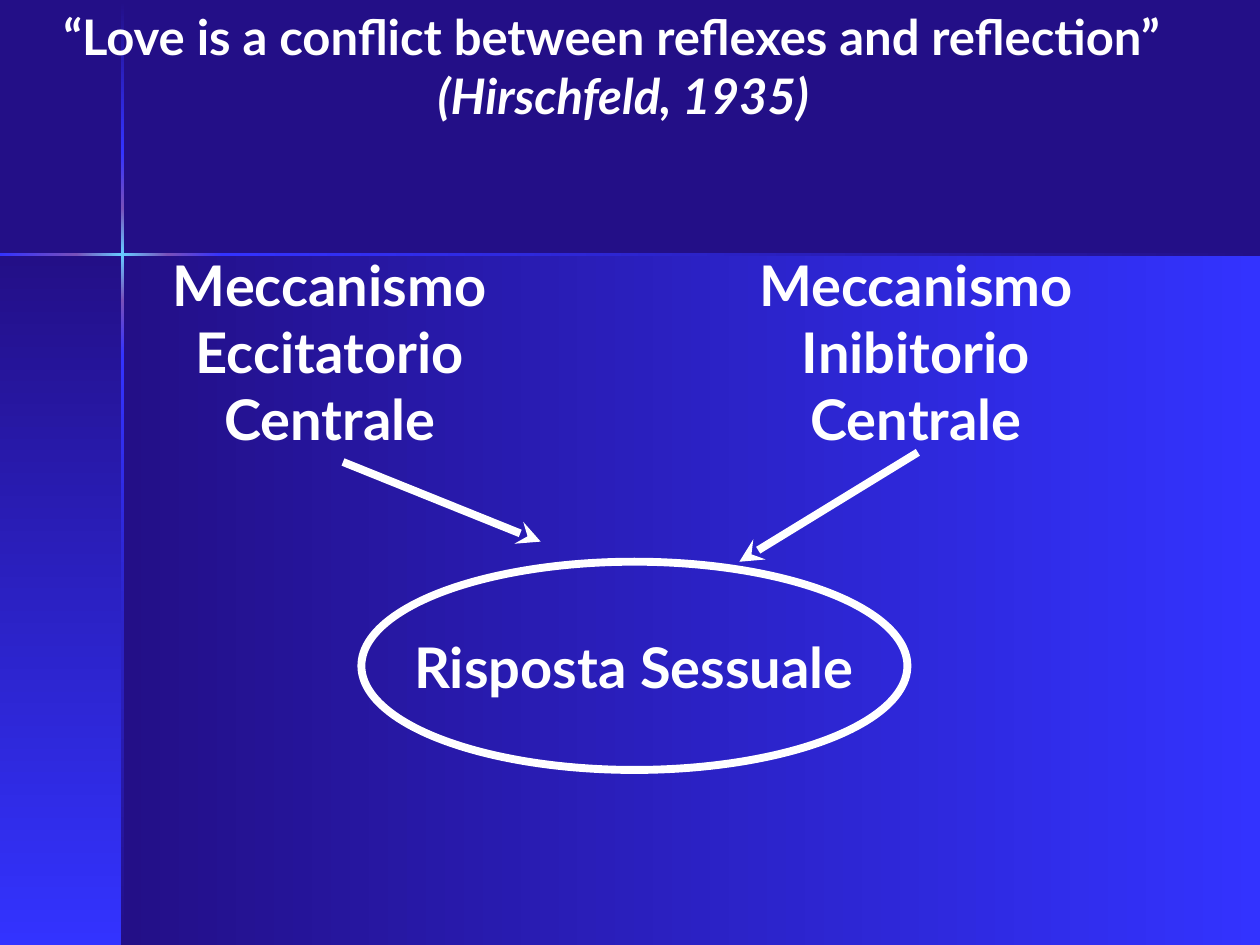
from itertools import pairwise

from lxml import etree
from pptx import Presentation
from pptx.dml.color import RGBColor
from pptx.enum import shapes, text
from pptx.oxml.ns import qn
from pptx.util import Pt

NAVY, BLUE, VIOLET, CYAN, WHITE = "230F87", "3333FF", "7850BA", "66CCFF", "FFFFFF"
FONT = "Lato"
CROSS_X, CROSS_Y = 70, 145.5
RAIL = 1.5
WIDTH, HEIGHT = 720, 540


def color(value):
    return RGBColor.from_string(value)


def add_gradient(slide, box, colors, angle):
    """Borderless rectangle with evenly spaced colours; 90 runs downward."""
    shape = slide.shapes.add_shape(shapes.MSO_SHAPE.RECTANGLE, *map(Pt, box))
    shape.shadow.inherit = False
    shape.line.fill.background()
    shape.fill.gradient()
    shape.fill.gradient_angle = -angle % 360
    stops = next(shape._element.iter(qn("a:gsLst")))
    for stop in list(stops):
        stops.remove(stop)
    for index, value in enumerate(colors):
        position = str(100000 * index // (len(colors) - 1))
        stop = etree.SubElement(stops, qn("a:gs"), pos=position)
        etree.SubElement(stop, qn("a:srgbClr"), val=value)


def add_backdrop(slide, box):
    left, top, width, height = box
    right, bottom = left + width, top + height
    background = slide.background.fill
    background.solid()
    background.fore_color.rgb = color(NAVY)

    # Main panel and side panel
    add_gradient(slide, (CROSS_X, CROSS_Y, right - CROSS_X, bottom - CROSS_Y), [NAVY, BLUE], 0)
    add_gradient(slide, (left, CROSS_Y, CROSS_X - left, bottom - CROSS_Y), [NAVY, BLUE], 90)

    # Glowing rails that cross at the panel corner
    glow = [[NAVY, BLUE], [BLUE, VIOLET], [VIOLET, CYAN, VIOLET], [VIOLET, BLUE], [BLUE, NAVY]]
    for (start, end), colors in zip(pairwise([top + 0.7, 87, 119, 171.5, 203, bottom]), glow):
        add_gradient(slide, (CROSS_X - RAIL / 2, start, RAIL, end - start), colors, 90)
    for (start, end), colors in zip(pairwise([left, 43.5, 96, 127.5, right]), glow[1:]):
        add_gradient(slide, (start, CROSS_Y - RAIL / 2, end - start, RAIL), colors, 0)


def write(paragraph, words, size, italic=None):
    paragraph.alignment = text.PP_ALIGN.CENTER
    run = paragraph.add_run()
    run.text = words
    run.font.name = FONT
    run.font.size = Pt(size)
    run.font.bold = True
    run.font.italic = italic
    run.font.color.rgb = color(WHITE)


def add_text_frame(slide, box):
    frame = slide.shapes.add_textbox(*map(Pt, box)).text_frame
    frame.word_wrap = True
    return frame


def add_title(slide, box):
    frame = add_text_frame(slide, box)
    write(frame.paragraphs[0], "“Love is a conflict between reflexes and reflection” ", 28)
    citation = frame.add_paragraph()
    write(citation, " ", 28)
    write(citation, "(Hirschfeld, 1935)", 28, italic=True)


def add_mechanism(slide, box, words):
    write(add_text_frame(slide, box).paragraphs[0], words, 32)


def add_response(slide, box):
    ellipse = slide.shapes.add_shape(shapes.MSO_SHAPE.OVAL, *map(Pt, box))
    ellipse.shadow.inherit = False
    ellipse.fill.background()
    ellipse.line.color.rgb = color(WHITE)
    ellipse.line.width = Pt(4.5)
    frame = ellipse.text_frame
    frame.word_wrap = False
    frame.vertical_anchor = text.MSO_ANCHOR.MIDDLE
    write(frame.paragraphs[0], "Risposta Sessuale", 32)


def add_arrow(slide, start, end):
    arrow = slide.shapes.add_connector(shapes.MSO_CONNECTOR.STRAIGHT, *map(Pt, start + end))
    arrow.line.color.rgb = color(WHITE)
    arrow.line.width = Pt(4.5)
    etree.SubElement(arrow.line._get_or_add_ln(), qn("a:tailEnd"), type="stealth")
    etree.SubElement(arrow._element.spPr, qn("a:effectLst"))


def main():
    presentation = Presentation()
    presentation.slide_width, presentation.slide_height = Pt(WIDTH), Pt(HEIGHT)
    slide = presentation.slides.add_slide(presentation.slide_layouts[6])

    add_backdrop(slide, (0, 0, WIDTH, HEIGHT))

    # Two mechanisms lead to one response
    add_mechanism(slide, (59.5, 139.5, 258, 124), "Meccanismo Eccitatorio Centrale")
    add_mechanism(slide, (398, 139.5, 251, 124), "Meccanismo Inibitorio Centrale")
    add_response(slide, (206.5, 321, 312, 119))
    add_arrow(slide, (196, 264), (309, 309.5))
    add_arrow(slide, (524.5, 258.5), (422.5, 321))

    add_title(slide, (0, 0, 705.5, 147.5))
    presentation.save("out.pptx")


if __name__ == "__main__":
    main()
